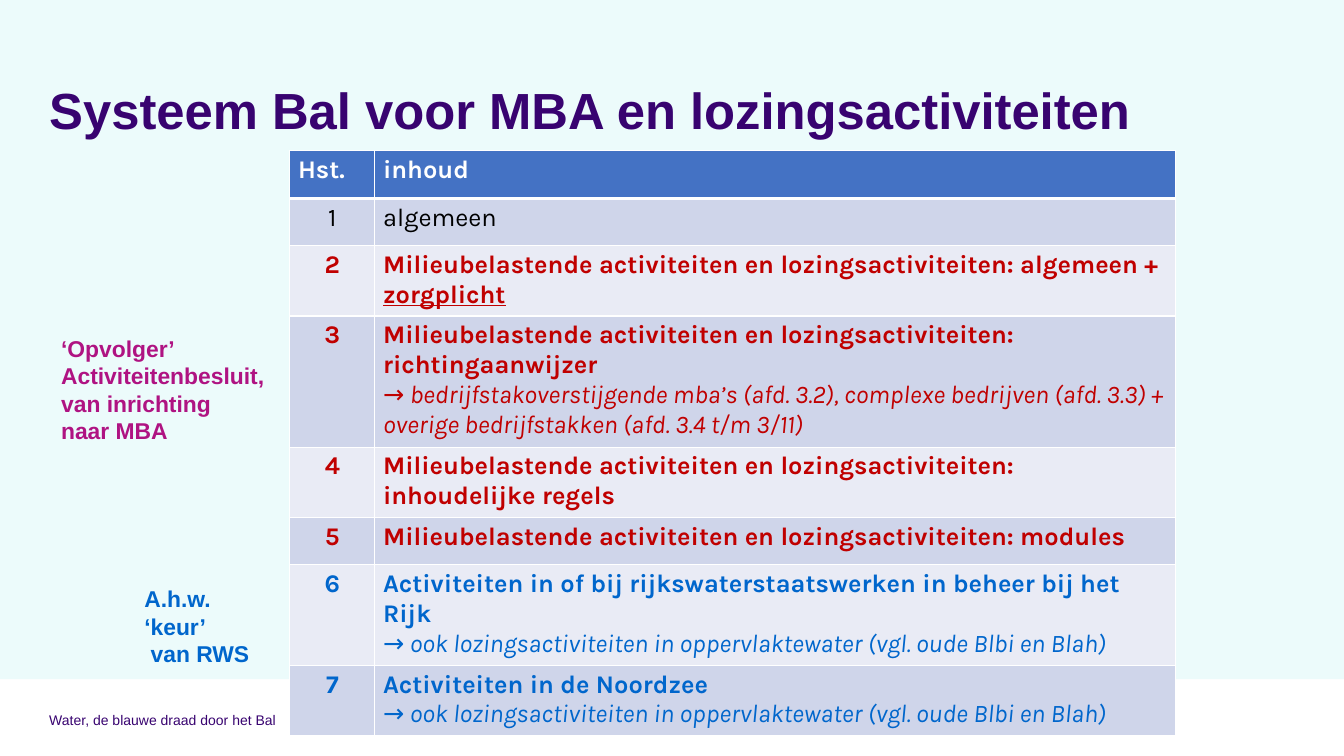
from dataclasses import dataclass

from lxml.etree import SubElement
from pptx import Presentation
from pptx.dml.color import RGBColor
from pptx.enum.shapes import MSO_SHAPE
from pptx.enum.text import MSO_ANCHOR, PP_ALIGN
from pptx.oxml.ns import qn
from pptx.util import Inches, Pt

WHITE = RGBColor(0xFF, 0xFF, 0xFF)
BLACK = RGBColor(0x00, 0x00, 0x00)
PALE_AQUA = RGBColor(0xEC, 0xFB, 0xFB)
PURPLE = RGBColor(0x38, 0x03, 0x70)
MAGENTA = RGBColor(0xAF, 0x13, 0x82)
RED = RGBColor(0xC0, 0x00, 0x00)
BLUE = RGBColor(0x00, 0x66, 0xCC)
HEADER_FILL = RGBColor(0x44, 0x72, 0xC4)
BAND_FILLS = (RGBColor(0xE9, 0xEB, 0xF5), RGBColor(0xCF, 0xD5, 0xEA))


@dataclass
class Label:
    text: str
    left: float
    top: float
    width: float
    height: float
    size: int
    color: RGBColor
    bold: bool = True
    anchor: MSO_ANCHOR = MSO_ANCHOR.TOP
    line_spacing: float = 1.0


@dataclass
class Chapter:
    number: str
    heading: str
    color: RGBColor
    height: float = 0.52
    underlined: str = ""
    detail: str = ""
    bold: bool = True


MBA = "Milieubelastende activiteiten en lozingsactiviteiten: "
WATER_DETAIL = "→ ook lozingsactiviteiten in oppervlaktewater (vgl. oude Blbi en Blah)"

LABELS = [
    Label("Systeem Bal voor MBA en lozingsactiviteiten", 0.44, 0.44, 13.78, 1.6,
          40, PURPLE, anchor=MSO_ANCHOR.MIDDLE, line_spacing=0.9),
    Label("Water, de blauwe draad door het Bal", 0.44, 7.66, 8.05, 0.44,
          11, PURPLE, bold=False, anchor=MSO_ANCHOR.MIDDLE),
    Label("‘Opvolger’ \vActiviteitenbesluit,\vvan inrichting \vnaar MBA",
          0.57, 3.61, 2.53, 1.31, 18, MAGENTA),
    Label("A.h.w. ‘keur’\v van RWS", 1.48, 6.35, 1.61, 0.71, 18, BLUE),
]

CHAPTERS = [
    Chapter("1", "algemeen", BLACK, bold=False),
    Chapter("2", MBA + "algemeen + ", RED, underlined="zorgplicht"),
    Chapter("3", MBA + "richtingaanwijzer", RED, height=1.02,
            detail="→ bedrijfstakoverstijgende mba’s (afd. 3.2), complexe bedrijven "
                   "(afd. 3.3) + overige bedrijfstakken (afd. 3.4 t/m 3/11)"),
    Chapter("4", MBA + "inhoudelijke regels", RED),
    Chapter("5", MBA + "modules", RED),
    Chapter("6", "Activiteiten in of bij rijkswaterstaatswerken in beheer bij het Rijk",
            BLUE, height=0.72, detail=WATER_DETAIL),
    Chapter("7", "Activiteiten in de Noordzee", BLUE, height=0.72, detail=WATER_DETAIL),
]


def style_runs(para, font_name: str, size: int, color: RGBColor, bold: bool) -> None:
    for span in para.runs:
        span.font.name = font_name
        span.font.size = Pt(size)
        span.font.color.rgb = color
        span.font.bold = bold


def add_label(page, label: Label) -> None:
    box = page.shapes.add_textbox(Inches(label.left), Inches(label.top),
                                  Inches(label.width), Inches(label.height))
    frame = box.text_frame
    frame.word_wrap = True
    frame.vertical_anchor = label.anchor
    frame.text = label.text.split("\n")[0]
    para = frame.paragraphs[0]
    para.line_spacing = label.line_spacing
    style_runs(para, "Arial", label.size, label.color, label.bold)


def set_borders(cell, top: int, bottom: int) -> None:
    """Draw white cell borders, with top and bottom widths in points."""
    properties = cell._tc.get_or_add_tcPr()
    for index, (side, width) in enumerate(
            (("lnL", 1), ("lnR", 1), ("lnT", top), ("lnB", bottom))):
        line = SubElement(properties, qn(f"a:{side}"), w=str(Pt(width)))
        fill = SubElement(line, qn("a:solidFill"))
        SubElement(fill, qn("a:srgbClr"), val=str(WHITE))
        properties.insert(index, line)


def fill_cell(cell, text: str, fill: RGBColor, color: RGBColor, bold: bool = True,
              underlined: str = "", top: int = 1, bottom: int = 1):
    cell.margin_left = cell.margin_right = Inches(0.09)
    cell.margin_top = cell.margin_bottom = Inches(0.05)
    cell.fill.solid()
    cell.fill.fore_color.rgb = fill
    set_borders(cell, top, bottom)
    para = cell.text_frame.paragraphs[0]
    para.text = text
    if underlined:
        span = para.add_run()
        span.text = underlined
        span.font.underline = True
    style_runs(para, "Karla", 20, color, bold)
    return para


def add_chapter_table(page) -> None:
    heights = [0.52] + [chapter.height for chapter in CHAPTERS]
    table = page.shapes.add_table(len(heights), 2, Inches(3.17), Inches(1.65),
                                  Inches(9.69), Inches(sum(heights))).table
    for column, width in zip(table.columns, (0.93, 8.76)):
        column.width = Inches(width)
    for row, height in zip(table.rows, heights):
        row.height = Inches(height)

    for column, heading in enumerate(("Hst.", "inhoud")):
        fill_cell(table.cell(0, column), heading, HEADER_FILL, WHITE, bottom=3)

    for row, chapter in enumerate(CHAPTERS, start=1):
        fill = BAND_FILLS[row % 2]
        top = 3 if row == 1 else 1
        number = fill_cell(table.cell(row, 0), chapter.number, fill, chapter.color,
                           chapter.bold, top=top)
        number.alignment = PP_ALIGN.CENTER
        text = "\v".join(filter(None, (chapter.heading, chapter.detail)))
        content = fill_cell(table.cell(row, 1), text, fill, chapter.color,
                            chapter.bold, chapter.underlined, top=top)
        if chapter.detail:
            detail = content.runs[-1]
            detail.font.bold = False
            detail.font.italic = True


def add_background(page) -> None:
    panel = page.shapes.add_shape(MSO_SHAPE.RECTANGLE, 0, 0, Inches(14.7), Inches(7.43))
    panel.shadow.inherit = False
    panel.fill.solid()
    panel.fill.fore_color.rgb = PALE_AQUA
    panel.line.fill.background()


def main() -> None:
    deck = Presentation()
    deck.slide_width = Inches(14.7)
    deck.slide_height = Inches(8.27)
    page = deck.slides.add_slide(deck.slide_layouts[6])
    add_background(page)
    for label in LABELS:
        add_label(page, label)
    add_chapter_table(page)
    deck.save("out.pptx")


if __name__ == "__main__":
    main()
